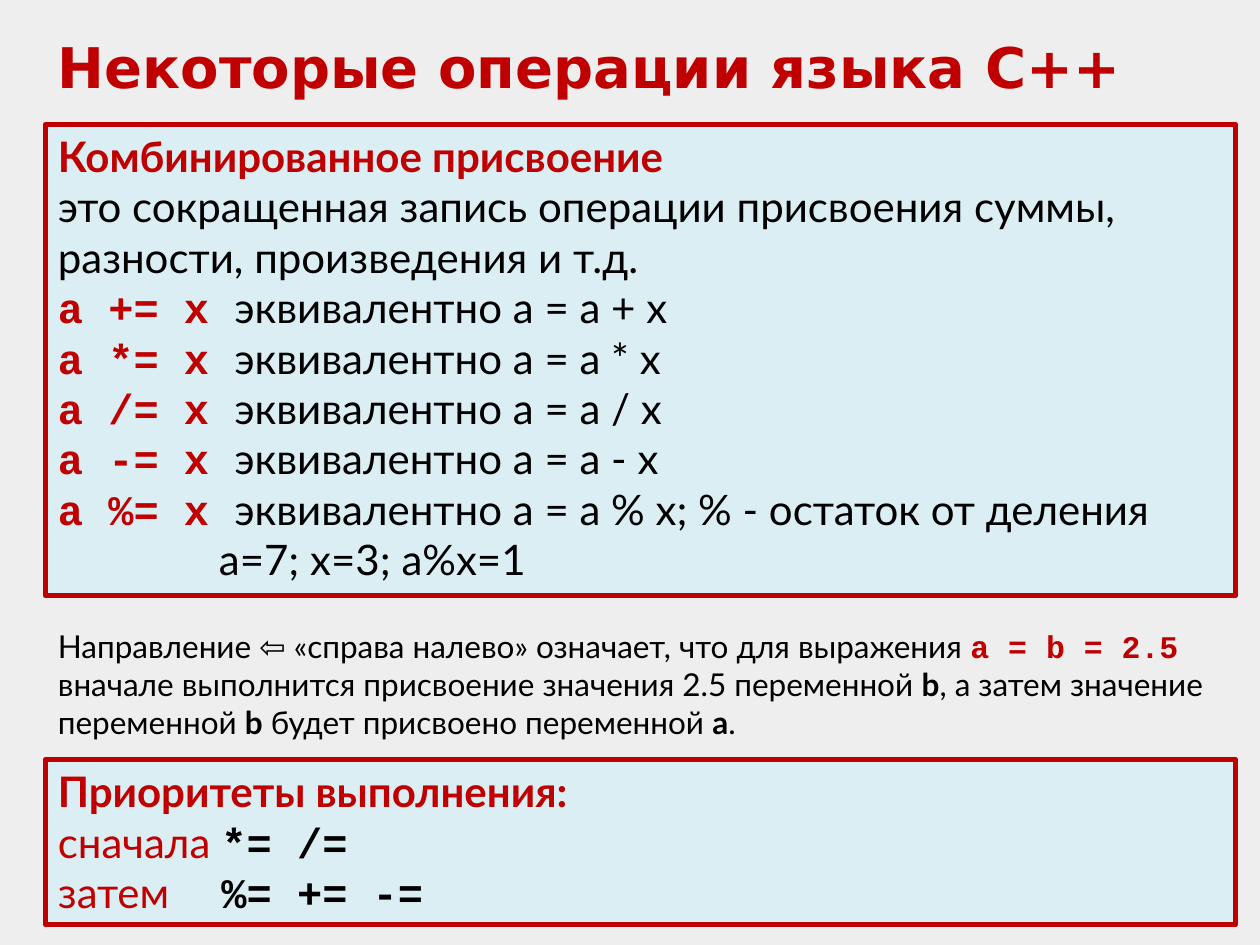
import pptx
import pptx.util
import pptx.dml.color
import pptx.enum.shapes
import pptx.enum.text
import pptx.oxml.ns
from lxml import etree

Pt = pptx.util.Pt

THEME = {
    "background": "EEEEEE", "panel": "DBEEF4", "red": "C00000", "black": "000000",
    "heading": "DejaVu Sans", "body": "Lato", "code": "Courier New",
    "title_size": 32, "panel_size": 24, "note_size": 18, "border": 3,
}

# Run styles: font, colour, bold
STYLES = {
    "title": ("heading", "red", True),
    "lead": ("body", "red", True),
    "plain": ("body", "black", False),
    "strong": ("body", "black", True),
    "order": ("body", "red", False),
    "operator": ("code", "red", True),
    "priority": ("code", "black", True),
}

# Content: each paragraph is a list of (text, style)
TITLE = [[("Некоторые операции языка C++", "title")]]

EQUIVALENTS = [
    ("+", "a = a + x"),
    ("*", "a = a * x"),
    ("/", "a = a / x"),
    ("-", "a = a - x"),
    ("%", "a = a % x; % - остаток от деления"),
]
ASSIGNMENT = [
    [("Комбинированное присвоение", "lead")],
    [("это сокращенная запись операции присвоения суммы, "
      "разности, произведения и т.д.", "plain")],
    *[[(f"a {sign}= x ", "operator"), (f"эквивалентно {meaning}", "plain")]
      for sign, meaning in EQUIVALENTS],
    [("a=7; x=3; a%x=1", "plain")],
]

DIRECTION = [
    [("Направление ⇦ «справа налево» означает, что для выражения ", "plain"),
     ("a = b = 2.5", "operator")],
    [("вначале выполнится присвоение значения 2.5 переменной ", "plain"),
     ("b", "strong"), (", а затем значение переменной ", "plain"),
     ("b", "strong"), (" будет присвоено переменной ", "plain"),
     ("a", "strong"), (".", "plain")],
]

PRIORITIES = [
    [("Приоритеты выполнения:", "lead")],
    [("сначала\t", "order"), ("*= /=", "priority")],
    [("затем\t", "order"), ("%= += -=", "priority")],
]

LEFT, WIDTH = 26, 680
INDENT = 92    # example line under the operators
TAB = 93.5     # operators in the priority list


def color(name):
    return pptx.dml.color.RGBColor.from_string(THEME[name])


def set_style(font, style):
    face, ink, bold = STYLES[style]
    font.name, font.bold = THEME[face], bold
    font.color.rgb = color(ink)


def write(shape, paragraphs, size):
    frame = shape.text_frame
    frame.word_wrap = True
    frame.vertical_anchor = pptx.enum.text.MSO_ANCHOR.TOP
    for index, runs in enumerate(paragraphs):
        paragraph = frame.add_paragraph() if index else frame.paragraphs[0]
        paragraph.alignment = pptx.enum.text.PP_ALIGN.LEFT
        properties = paragraph._p.get_or_add_pPr()
        if any("\t" in text for text, _ in runs):
            tabs = etree.SubElement(properties, pptx.oxml.ns.qn("a:tabLst"))
            etree.SubElement(tabs, pptx.oxml.ns.qn("a:tab"),
                             pos=str(Pt(TAB)), algn="l")
        paragraph.font.size = Pt(THEME[size])
        uniform = len({style for _, style in runs}) == 1
        if uniform:
            set_style(paragraph.font, runs[0][1])
        for text, style in runs:
            run = paragraph.add_run()
            run.text = text
            if not uniform:
                set_style(run.font, style)
    return frame


def add_text(slide, top, height, paragraphs, size):
    box = slide.shapes.add_textbox(Pt(LEFT), Pt(top), Pt(WIDTH), Pt(height))
    return write(box, paragraphs, size)


def add_panel(slide, top, height, paragraphs):
    panel = slide.shapes.add_shape(pptx.enum.shapes.MSO_SHAPE.RECTANGLE,
                                   Pt(LEFT), Pt(top), Pt(WIDTH), Pt(height))
    panel.shadow.inherit = False
    panel.fill.solid()
    panel.fill.fore_color.rgb = color("panel")
    panel.line.color.rgb = color("red")
    panel.line.width = Pt(THEME["border"])
    return write(panel, paragraphs, "panel_size")


def main():
    deck = pptx.Presentation()
    deck.slide_width, deck.slide_height = Pt(720), Pt(540)
    slide = deck.slides.add_slide(deck.slide_layouts[6])
    slide.background.fill.solid()
    slide.background.fill.fore_color.rgb = color("background")

    # Title
    add_text(slide, 15, 46, TITLE, "title_size")

    # Combined assignment, with the example line indented
    assignment = add_panel(slide, 71, 269.5, ASSIGNMENT)
    assignment.paragraphs[-1]._p.get_or_add_pPr().set("marL", str(Pt(INDENT)))

    # Priorities and the note on direction
    add_panel(slide, 434, 94.5, PRIORITIES)
    add_text(slide, 355, 73, DIRECTION, "note_size")

    deck.save("out.pptx")


if __name__ == "__main__":
    main()
